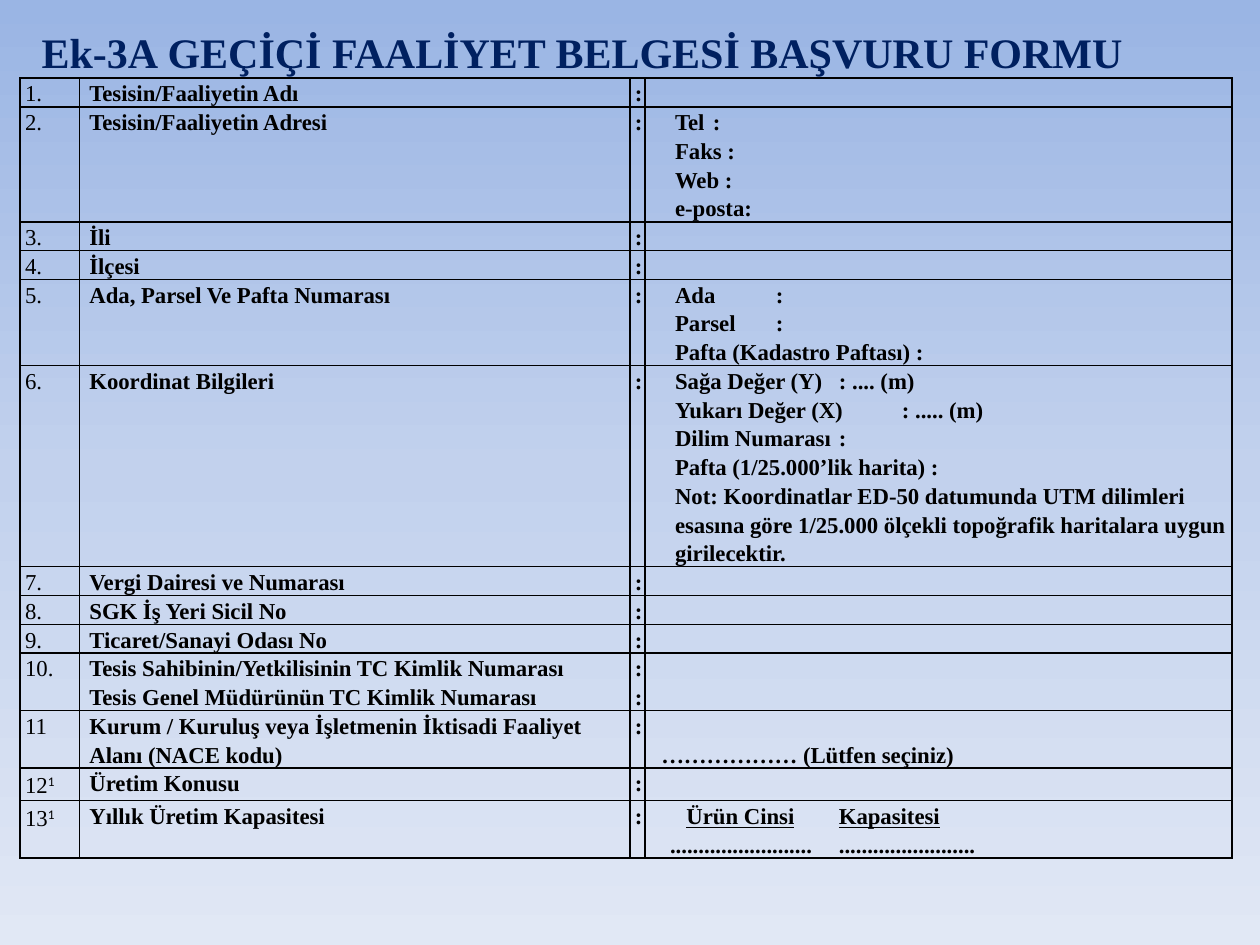
from pptx import Presentation
from pptx.dml.color import RGBColor
from pptx.enum.text import MSO_ANCHOR, MSO_AUTO_SIZE, PP_ALIGN
from pptx.oxml.ns import qn
from pptx.util import Inches, Pt
from lxml.etree import SubElement

COLORS = {"top": "9AB5E4", "middle": "C2D1ED", "bottom": "E1E8F5", "title": "002060", "text": "000000"}
SERIF = "Times New Roman"
COLUMN_WIDTHS = [0.47, 4.37, 0.11, 4.66]
LINE = {"left": 0.2}
NOTE = ("Not: Koordinatlar ED-50 datumunda UTM dilimleri esasına göre 1/25.000 ölçekli "
        "topoğrafik haritalara uygun girilecektir.")
ROWS = [
    (0.21, "1.", ["Tesisin/Faaliyetin Adı"], []),
    (0.84, "2.", ["Tesisin/Faaliyetin Adresi"], [
        ("Tel\t:", {"first": 0.2, "tabs": [0.57]}), ("Faks :", LINE), ("Web :", LINE), ("e-posta:", LINE)]),
    (0.21, "3.", ["İli"], []),
    (0.21, "4.", ["İlçesi"], []),
    (0.62, "5.", ["Ada, Parsel Ve Pafta Numarası"], [
        ("Ada\t:", {"first": 0.2, "tabs": [0.75]}), ("Parsel\t:", {"first": 0.2, "tabs": [0.77]}),
        ("Pafta (Kadastro Paftası) :", LINE)]),
    (1.48, "6.", ["Koordinat Bilgileri"], [
        ("Sağa Değer (Y)\t: .... (m)", {"first": 0.2, "tabs": [1.59]}),
        ("Yukarı Değer (X)\t: ..... (m)", {"first": 0.2, "tabs": [1.62]}),
        ("Dilim Numarası\t:", {"first": 0.2, "tabs": [1.62]}),
        ("Pafta (1/25.000’lik harita) :", LINE), (NOTE, LINE)]),
    (0.21, "7.", ["Vergi Dairesi ve Numarası"], []),
    (0.21, "8.", ["SGK İş Yeri Sicil No"], []),
    (0.21, "9.", ["Ticaret/Sanayi Odası No"], []),
    (0.41, "10.", ["Tesis Sahibinin/Yetkilisinin TC Kimlik Numarası",
                   "Tesis Genel Müdürünün TC Kimlik Numarası"], []),
    (0.41, "11", ["Kurum / Kuruluş veya İşletmenin İktisadi Faaliyet", "Alanı (NACE kodu)"],
     [("……………… (Lütfen seçiniz)", {"left": 0.09})]),
    (0.26, "12", ["Üretim Konusu"], []),
    (0.41, "13", ["Yıllık Üretim Kapasitesi"], [
        ("Ürün Cinsi\tKapasitesi", {"first": 0.29, "tabs": [2.5], "underline": True}),
        (".........................\t........................", {"first": 0.16, "tabs": [2.41]})]),
]
FOOTNOTED = {"12", "13"}


def add_span(para, text, size=13, font=SERIF, color="text", bold=True, underline=False, raised=False):
    """Add one formatted run to a paragraph."""
    span = para.add_run()
    span.text = text
    span.font.size = Pt(size)
    span.font.name = font
    span.font.bold = bold
    span.font.underline = underline
    span.font.color.rgb = RGBColor.from_string(COLORS[color])
    if raised:
        span.font._element.set("baseline", "30000")


def write(para, text, left=0, first=0, tabs=(), spacing=1.15, underline=False, **style):
    """Fill a paragraph with text, its indents and its tab stops."""
    para.line_spacing = spacing
    para.alignment = PP_ALIGN.LEFT
    properties = para._p.get_or_add_pPr()
    properties.set("marL", str(Inches(left)))
    properties.set("indent", str(Inches(first)))
    if tabs:
        stops = SubElement(properties, qn("a:tabLst"))
        for position in tabs:
            SubElement(stops, qn("a:tab"), pos=str(Inches(position)), algn="l")
    for index, piece in enumerate(text.split("\t")):
        if index:
            add_span(para, "\t", **style)
        add_span(para, piece, underline=underline, **style)


def format_cell(cell):
    """Give a table cell its margins, black borders and no fill."""
    cell.margin_left = cell.margin_right = Inches(0.04)
    cell.margin_top = cell.margin_bottom = 0
    properties = cell._tc.get_or_add_tcPr()
    for side in ("lnL", "lnR", "lnT", "lnB"):
        border = SubElement(properties, qn(f"a:{side}"), w=str(Pt(1)))
        fill = SubElement(border, qn("a:solidFill"))
        SubElement(fill, qn("a:srgbClr"), val=COLORS["text"])
    cell.fill.background()


def fill_cell(cell, lines):
    """Write a list of (text, format) lines into a cell."""
    format_cell(cell)
    frame = cell.text_frame
    for index, (text, style) in enumerate(lines):
        write(frame.add_paragraph() if index else frame.paragraphs[0], text, **style)
    if not lines:
        frame.paragraphs[0].line_spacing = 1.15
        ending = frame.paragraphs[0]._p.get_or_add_endParaRPr()
        ending.set("sz", "1300")
        SubElement(ending, qn("a:latin"), typeface=SERIF)


def add_form(page):
    """Add the application form table."""
    total = sum(row[0] for row in ROWS)
    frame = page.shapes.add_table(len(ROWS), len(COLUMN_WIDTHS), Inches(0.16), Inches(0.62),
                                  Inches(sum(COLUMN_WIDTHS)), Inches(total))
    table = frame.table
    table.first_row = table.horz_banding = False
    for column, width in zip(table.columns, COLUMN_WIDTHS):
        column.width = Inches(width)
    for index, (height, number, labels, entries) in enumerate(ROWS):
        table.rows[index].height = Inches(height)
        colons = 2 if number == "10." else 1
        contents = [[(number, {"bold": False})], [(label, {"left": 0.04}) for label in labels],
                    [(":", {})] * colons, entries]
        for position, lines in enumerate(contents):
            fill_cell(table.cell(index, position), lines)
        if number in FOOTNOTED:
            para = table.cell(index, 0).text_frame.paragraphs[0]
            add_span(para, "1", font="Calibri", bold=False, raised=True)
        if number == "11":
            table.cell(index, 3).vertical_anchor = MSO_ANCHOR.BOTTOM


def add_title(page):
    """Format the title placeholder and bring it to the front."""
    box = page.shapes.title
    box.left, box.top, box.width, box.height = map(Inches, (0.23, 0.16, 9.53, 0.51))
    frame = box.text_frame
    frame.word_wrap = True
    frame.auto_size = MSO_AUTO_SIZE.NONE
    frame.vertical_anchor = MSO_ANCHOR.TOP
    write(frame.paragraphs[0], "Ek-3A\tGEÇİÇİ FAALİYET BELGESİ BAŞVURU FORMU",
          tabs=[1.16], spacing=1.0, size=24, color="title")
    page.shapes._spTree.append(box._element)


def paint_background(page):
    """Paint the vertical three-colour gradient."""
    fill = page.background.fill
    fill.gradient()
    fill.gradient_angle = 270
    stops = next(page._element.iter(qn("a:gsLst")))
    for stop in list(stops):
        stops.remove(stop)
    for position, name in ((0, "top"), (50000, "middle"), (100000, "bottom")):
        stop = SubElement(stops, qn("a:gs"), pos=str(position))
        SubElement(stop, qn("a:srgbClr"), val=COLORS[name])


def main():
    """Build and save the one-page deck."""
    deck = Presentation()
    deck.slide_width, deck.slide_height = Inches(10), Inches(7.5)
    page = deck.slides.add_slide(deck.slide_layouts[5])
    paint_background(page)
    add_form(page)
    add_title(page)
    deck.save("out.pptx")


if __name__ == "__main__":
    main()
